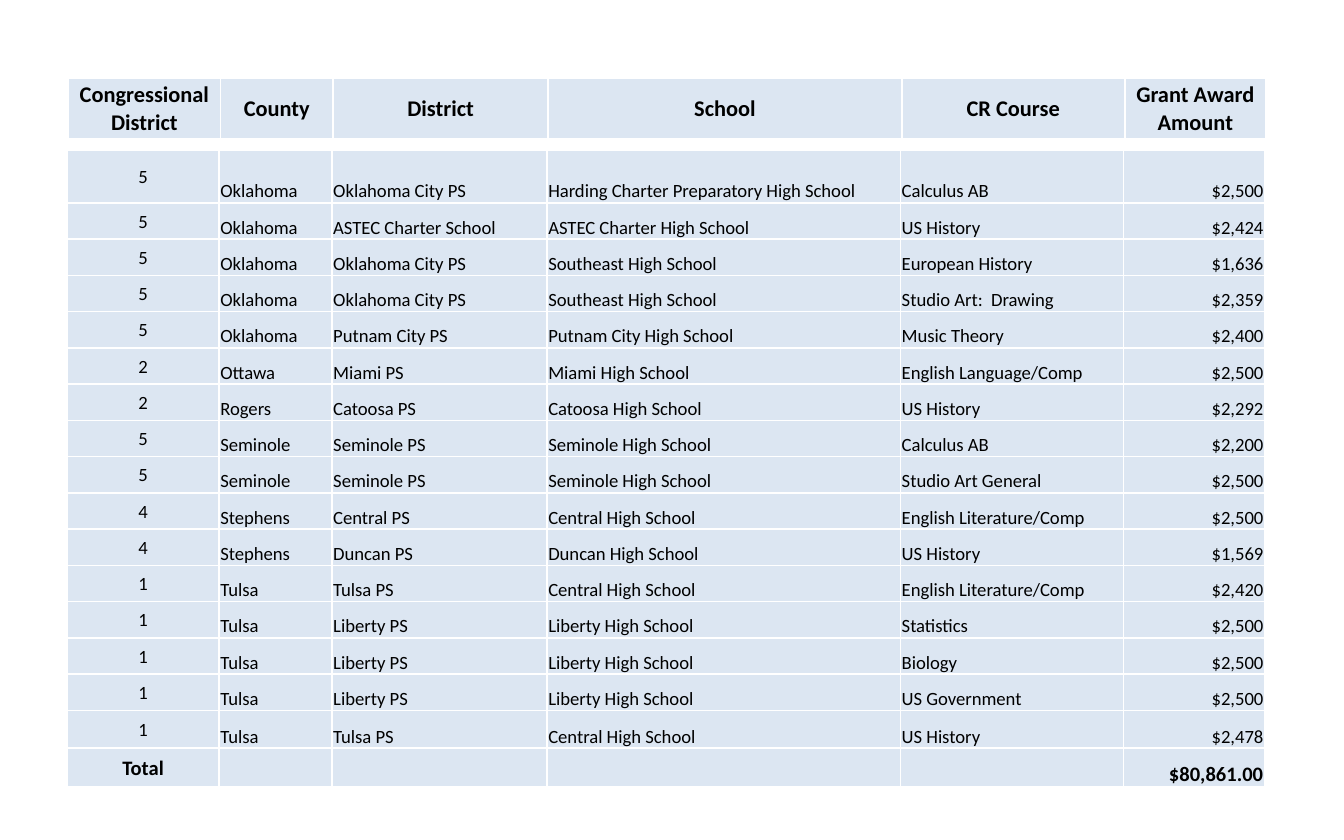
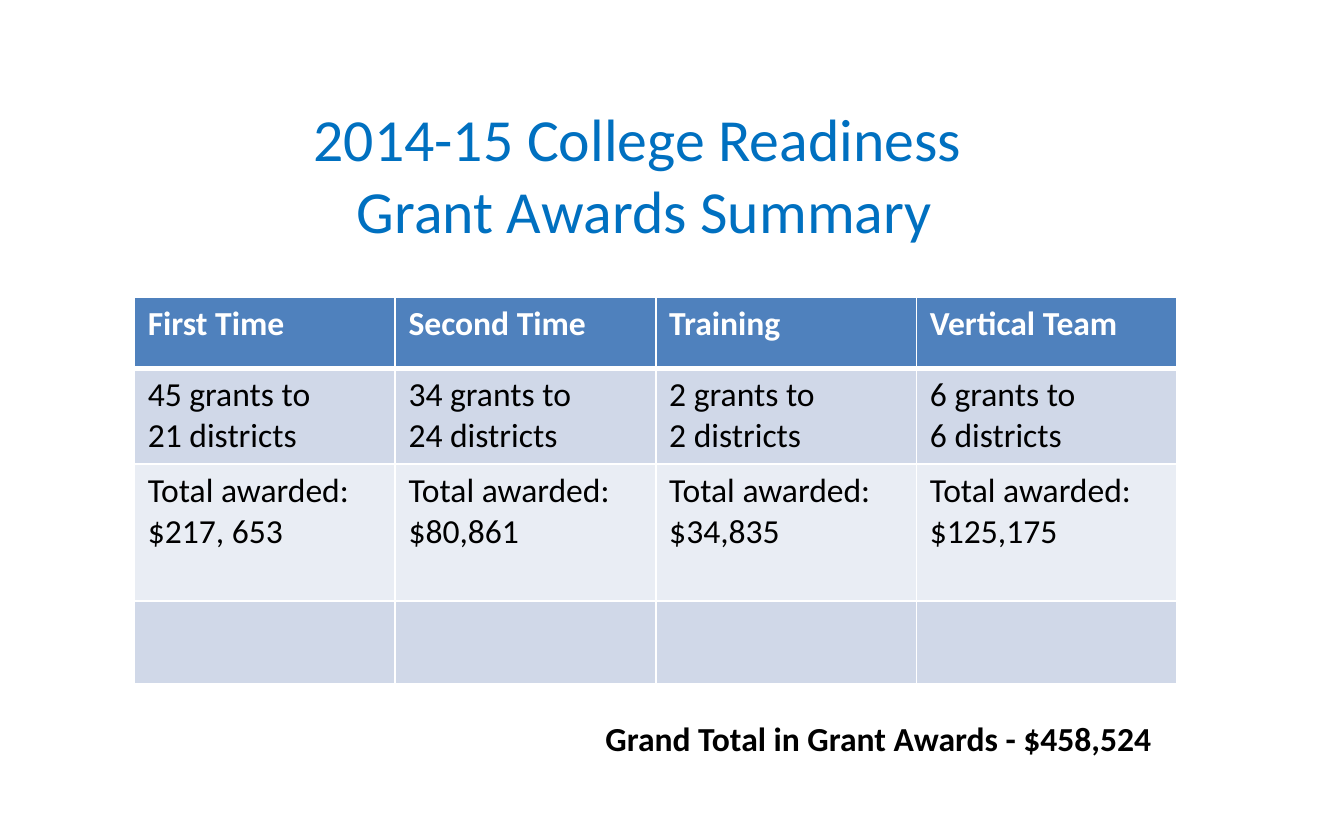
import pptx
import pptx.dml.color
import pptx.enum.text
import pptx.oxml
import pptx.oxml.ns
import pptx.util

PX = 9144
WHITE, BLACK, TITLE_BLUE = "FFFFFF", "000000", "0070C0"
PALE_BLUE, HEADER_BLUE, BAND_DARK, BAND_LIGHT = "DCE6F2", "4F81BD", "D0D8E8", "E9EDF4"
ALIGN = pptx.enum.text.PP_ALIGN
ANCHOR = pptx.enum.text.MSO_ANCHOR
color = pptx.dml.color.RGBColor.from_string


def write(frame, text, size, ink=BLACK, bold=False, align=ALIGN.LEFT):
    font_format = {"name": "Calibri", "size": pptx.util.Pt(size), "bold": bold}
    for index, line in enumerate(text.split("\n")):
        para = frame.add_paragraph() if index else frame.paragraphs[0]
        para.alignment = align
        span = para.add_run()
        span.text = line
        for name, value in font_format.items():
            setattr(span.font, name, value)
        span.font.color.rgb = color(ink)


def add_grid(page, left, top, widths, heights, fills, thick_rows=()):
    frame = page.shapes.add_table(
        len(heights), len(widths), left * PX, top * PX, sum(widths) * PX, sum(heights) * PX
    )
    table = frame.table
    table.first_row = table.horz_banding = False
    for column, width in zip(table.columns, widths):
        column.width = width * PX
    for row_index, (row, height, fill) in enumerate(zip(table.rows, heights, fills)):
        row.height = height * PX
        borders = {
            "lnL": 1,
            "lnR": 1,
            "lnT": 3 if row_index - 1 in thick_rows else 1,
            "lnB": 3 if row_index in thick_rows else 1,
        }
        for cell in row.cells:
            cell.fill.solid()
            cell.fill.fore_color.rgb = color(fill)
            properties = cell._tc.get_or_add_tcPr()
            for index, (side, points) in enumerate(borders.items()):
                properties.insert(index, pptx.oxml.parse_xml(
                    f'<a:{side} {pptx.oxml.ns.nsdecls("a")} w="{points * 12700}">'
                    f'<a:solidFill><a:srgbClr val="{WHITE}"/></a:solidFill></a:{side}>'
                ))
    return table


deck = pptx.Presentation()
deck.slide_width = 1000 * PX
deck.slide_height = 625 * PX
blank = deck.slide_layouts[6]

grants = [
    ("5", "Oklahoma", "Oklahoma City PS", "Harding Charter Preparatory High School", "Calculus AB", "$2,500"),
    ("5", "Oklahoma", "ASTEC Charter School", "ASTEC Charter High School", "US History", "$2,424"),
    ("5", "Oklahoma", "Oklahoma City PS", "Southeast High School", "European History", "$1,636"),
    ("5", "Oklahoma", "Oklahoma City PS", "Southeast High School", "Studio Art:  Drawing", "$2,359"),
    ("5", "Oklahoma", "Putnam City PS", "Putnam City High School", "Music Theory", "$2,400"),
    ("2", "Ottawa", "Miami PS", "Miami High School", "English Language/Comp", "$2,500"),
    ("2", "Rogers", "Catoosa PS", "Catoosa High School", "US History", "$2,292"),
    ("5", "Seminole", "Seminole PS", "Seminole High School", "Calculus AB", "$2,200"),
    ("5", "Seminole", "Seminole PS", "Seminole High School", "Studio Art General", "$2,500"),
    ("4", "Stephens", "Central PS", "Central High School", "English Literature/Comp", "$2,500"),
    ("4", "Stephens", "Duncan PS", "Duncan High School", "US History", "$1,569"),
    ("1", "Tulsa", "Tulsa PS", "Central High School", "English Literature/Comp", "$2,420"),
    ("1", "Tulsa", "Liberty PS", "Liberty High School", "Statistics", "$2,500"),
    ("1", "Tulsa", "Liberty PS", "Liberty High School", "Biology", "$2,500"),
    ("1", "Tulsa", "Liberty PS", "Liberty High School", "US Government", "$2,500"),
    ("1", "Tulsa", "Tulsa PS", "Central High School", "US History", "$2,478"),
    ("Total", "", "", "", "", "$80,861.00"),
]
headings = ("Congressional District", "County", "District", "School", "CR Course", "Grant Award Amount")
grant_widths = [113, 84, 160, 263, 166, 105]
grant_heights = [39] + [27] * 14 + [28, 29]
grant_aligns = [ALIGN.CENTER] + [ALIGN.LEFT] * 4 + [ALIGN.RIGHT]
tight_margins = {"margin_left": PX, "margin_top": PX, "margin_right": PX, "margin_bottom": 0}

page = deck.slides.add_slide(blank)
grant_table = add_grid(page, 50, 112, grant_widths, grant_heights, [PALE_BLUE] * len(grants))
for row, grant in zip(grant_table.rows, grants):
    is_total = grant[0] == "Total"
    for index, (cell, text) in enumerate(zip(row.cells, grant)):
        cell_format = {**tight_margins, "vertical_anchor": ANCHOR.BOTTOM if index else ANCHOR.MIDDLE}
        for name, value in cell_format.items():
            setattr(cell, name, value)
        write(cell.text_frame, text, 11 if is_total else 10, bold=is_total, align=grant_aligns[index])

heading_table = add_grid(page, 51, 58, grant_widths, [45], [PALE_BLUE])
for cell, text in zip(heading_table.rows[0].cells, headings):
    for name, value in {**tight_margins, "vertical_anchor": ANCHOR.MIDDLE}.items():
        setattr(cell, name, value)
    write(cell.text_frame, text, 12, bold=True, align=ALIGN.CENTER)

summary = [
    ("First Time", "Second Time", "Training", "Vertical Team"),
    (
        "45 grants to\n21 districts",
        "34 grants to\n24 districts",
        "2 grants to\n2 districts",
        "6 grants to\n6 districts",
    ),
    (
        "Total awarded: $217, 653",
        "Total awarded:\n$80,861",
        "Total awarded:\n$34,835",
        "Total awarded:\n$125,175",
    ),
    ("", "", "", ""),
]
summary_fills = [HEADER_BLUE, BAND_DARK, BAND_LIGHT, BAND_DARK]

page = deck.slides.add_slide(blank)
summary_table = add_grid(page, 100, 221, [194] * 4, [53, 71, 102, 62], summary_fills, thick_rows=(0,))
for row_index, (row, texts) in enumerate(zip(summary_table.rows, summary)):
    is_header = row_index == 0
    for cell, text in zip(row.cells, texts):
        write(cell.text_frame, text, 18, WHITE if is_header else BLACK, is_header)

title_box = page.shapes.add_textbox(67 * PX, 71 * PX, 825 * PX, 118 * PX)
title_box.text_frame.word_wrap = True
write(
    title_box.text_frame,
    "2014-15 College Readiness \nGrant Awards Summary",
    32, TITLE_BLUE, align=ALIGN.CENTER,
)

total_box = page.shapes.add_textbox(92 * PX, 529 * PX, 800 * PX, 40 * PX)
total_box.text_frame.word_wrap = True
total_box.text_frame.margin_right = 35 * PX
write(
    total_box.text_frame,
    "Grand Total in Grant Awards - $458,524",
    18, bold=True, align=ALIGN.RIGHT,
)

deck.save("out.pptx")
